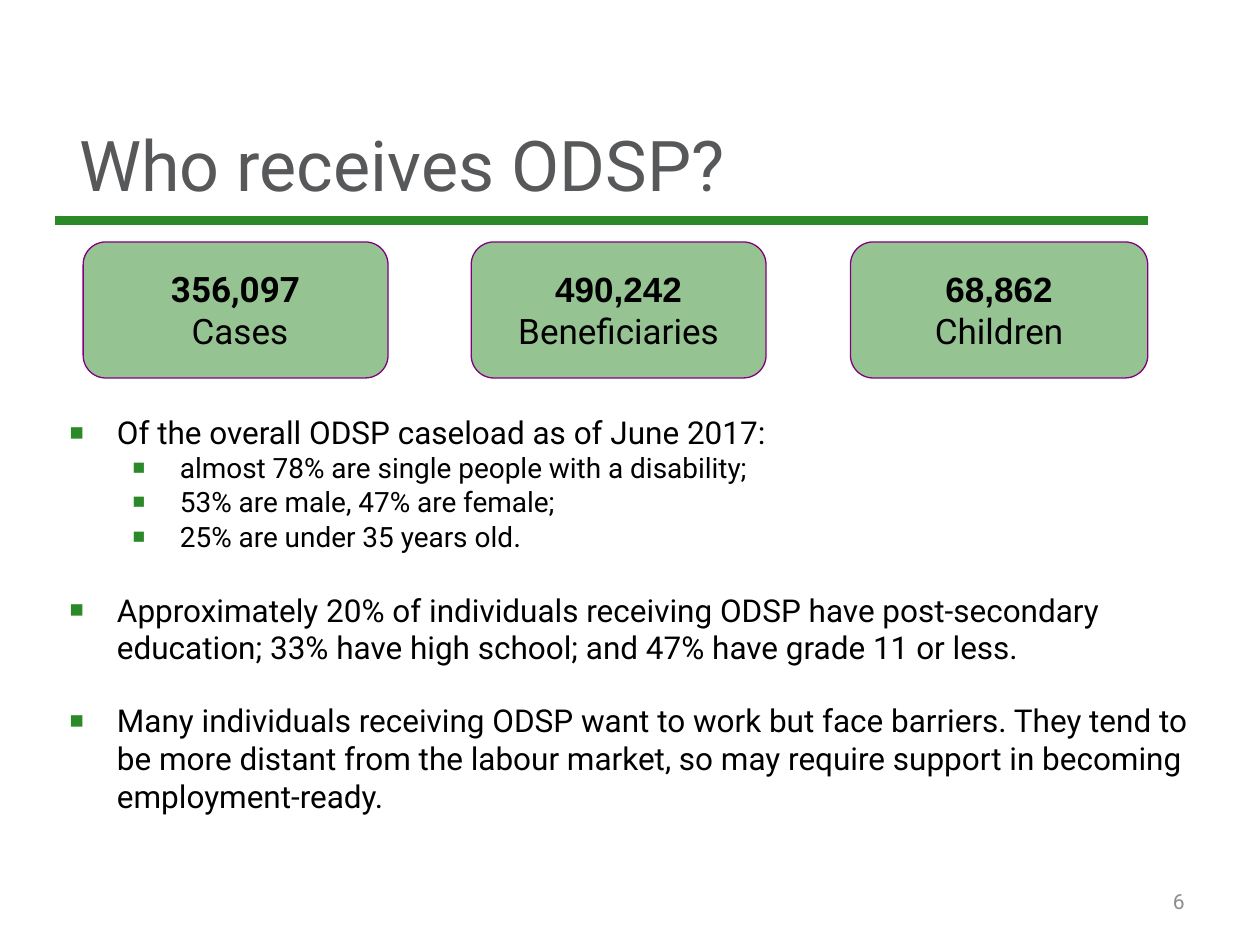
from lxml import etree
from pptx import Presentation
from pptx.dml.color import RGBColor
from pptx.enum import shapes, text
from pptx.oxml import ns
from pptx.util import Pt

GREEN = RGBColor(0x2C, 0x89, 0x27)
PURPLE = RGBColor(0x80, 0x00, 0x80)
BLACK = RGBColor(0x00, 0x00, 0x00)
TITLE_GREY = RGBColor(0x57, 0x58, 0x5A)
NUMBER_GREY = RGBColor(0x8C, 0x8C, 0x8C)

CARD_TOP, CARD_HEIGHT = 138.24, 77.76
# left, width, figure, figure font, label
CARDS = [
    (47.5, 174.25, "356,097", "Roboto", " Cases"),
    (269.3, 168.5, "490,242", "Arial", "Beneficiaries"),
    (486, 169.9, "68,862", "Arial", "Children"),
]

# text, left indent, size, space before
BULLETS = [
    ("Of the overall ODSP caseload as of June 2017:", 36, 18, 0),
    ("almost 78% are single people with a disability;", 72, 16, 0),
    ("53% are male, 47% are female;", 72, 16, 0),
    ("25% are under 35 years old", 72, 16, 0),
    ("Approximately 20% of individuals receiving ODSP have post-secondary "
     "education; 33% have high school; and 47% have grade 11 or less.",
     36, 18, 21),
    ("Many individuals receiving ODSP want to work but face barriers. "
     "They tend to be more distant from the labour market, so may require "
     "support in becoming employment-ready.", 36, 18, 20),
]


def add_span(para, words, size=18, color=BLACK, font="Roboto", bold=False):
    span = para.add_run()
    span.text = words
    span.font.size = Pt(size)
    span.font.name = font
    span.font.bold = bold
    span.font.color.rgb = color


def add_box(page, left, top, width, height, anchor=text.MSO_ANCHOR.MIDDLE):
    box = page.shapes.add_textbox(Pt(left), Pt(top), Pt(width), Pt(height))
    frame = box.text_frame
    frame.word_wrap = True
    frame.vertical_anchor = anchor
    return frame


def next_paragraph(frame, index):
    return frame.paragraphs[0] if index == 0 else frame.add_paragraph()


def add_child(parent, tag, **attributes):
    child = etree.SubElement(parent, ns.qn(tag))
    for name, value in attributes.items():
        child.set(name, str(value))
    return child


def set_bullet(para, indent):
    """Give a paragraph a hanging green square."""
    properties = para._p.get_or_add_pPr()
    properties.set("marL", str(Pt(indent)))
    properties.set("indent", str(Pt(-27)))
    add_child(add_child(properties, "a:buClr"), "a:srgbClr", val=GREEN)
    add_child(properties, "a:buSzPct", val=75000)
    add_child(properties, "a:buFont", typeface="Arial")
    add_child(properties, "a:buChar", char="■")


def add_bullets(page):
    frame = add_box(page, 23.76, 232.56, 666, 241.2, text.MSO_ANCHOR.TOP)
    for index, (words, indent, size, gap) in enumerate(BULLETS):
        para = next_paragraph(frame, index)
        para.space_before = Pt(gap)
        set_bullet(para, indent)
        add_span(para, words, size=size)
    add_span(frame.paragraphs[3], ".", size=17)


def add_rule(page):
    rule = page.shapes.add_connector(
        shapes.MSO_CONNECTOR.STRAIGHT, Pt(31.7), Pt(126), Pt(655.9), Pt(126))
    rule.line.color.rgb = GREEN
    rule.line.width = Pt(5)
    add_child(rule._element.spPr, "a:effectLst")


def add_card(page, left, width, figure, figure_font, label):
    card = page.shapes.add_shape(
        shapes.MSO_SHAPE.FLOWCHART_ALTERNATE_PROCESS,
        Pt(left), Pt(CARD_TOP), Pt(width), Pt(CARD_HEIGHT))
    card.shadow.inherit = False
    card.fill.solid()
    card.fill.fore_color.rgb = GREEN
    fill_color = card._element.spPr.find(
        ns.qn("a:solidFill")).find(ns.qn("a:srgbClr"))
    add_child(fill_color, "a:alpha", val=50000)
    card.line.color.rgb = PURPLE
    card.line.width = Pt(0.75)
    frame = card.text_frame
    frame.word_wrap = False
    frame.vertical_anchor = text.MSO_ANCHOR.MIDDLE
    lines = [(figure, figure_font, True), (label, "Roboto", False)]
    for index, (words, font, bold) in enumerate(lines):
        para = next_paragraph(frame, index)
        para.alignment = text.PP_ALIGN.CENTER
        add_span(para, words, size=20, font=font, bold=bold)


def main():
    deck = Presentation()
    deck.slide_width, deck.slide_height = Pt(720), Pt(540)
    page = deck.slides.add_slide(deck.slide_layouts[6])

    title = add_box(page, 38.16, 48.24, 644.4, 90)
    add_span(title.paragraphs[0], "Who receives ODSP?", size=40,
             color=TITLE_GREY)
    number = add_box(page, 516.24, 500.4, 167.76, 28.8).paragraphs[0]
    number.alignment = text.PP_ALIGN.RIGHT
    add_span(number, "6", size=12, color=NUMBER_GREY)

    add_bullets(page)
    add_rule(page)
    for card in CARDS:
        add_card(page, *card)
    deck.save("out.pptx")


if __name__ == "__main__":
    main()
